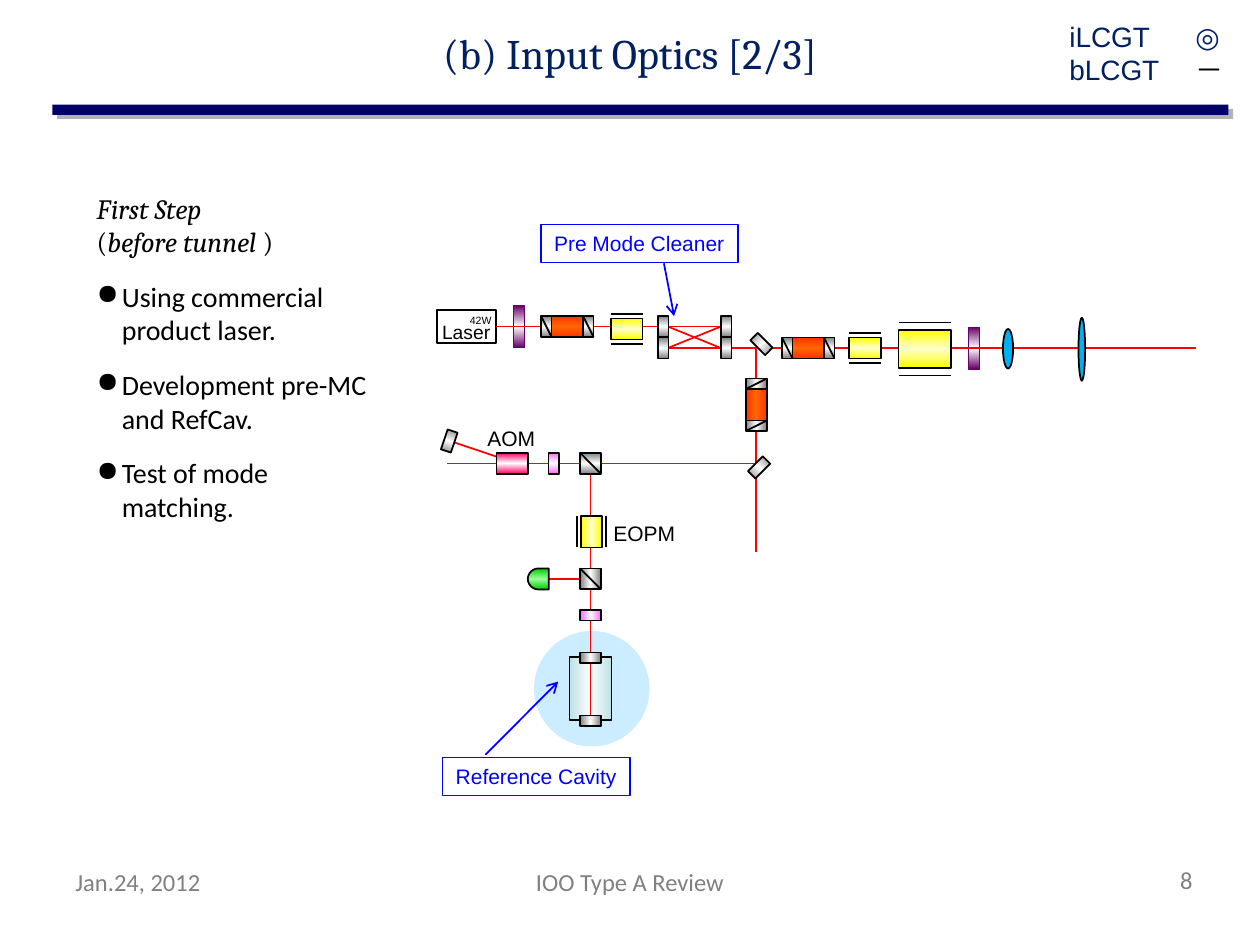
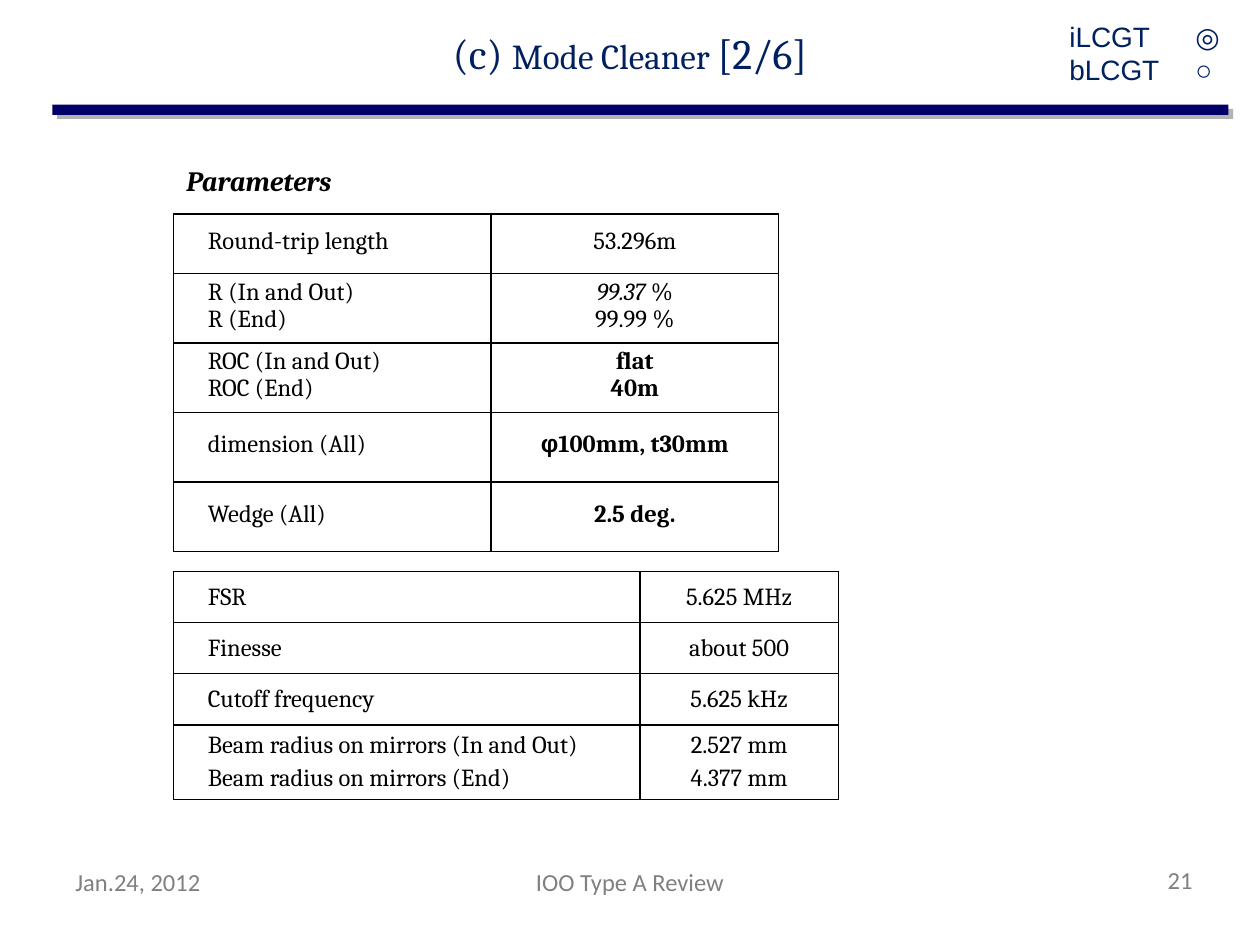
from dataclasses import dataclass
from math import cos, radians, sin
from typing import NamedTuple, Optional

from pptx import Presentation
from pptx.dml.color import RGBColor
from pptx.enum.shapes import MSO_CONNECTOR, MSO_SHAPE as Preset
from pptx.enum.text import MSO_ANCHOR as Anchor, MSO_AUTO_SIZE as AutoSize, PP_ALIGN as Align
from pptx.oxml import parse_xml
from pptx.oxml.ns import nsdecls, qn
from pptx.util import Pt

NAVY, BAND, BAND_SHADOW, GRAY = "002060", "000066", "B2B2B2", "808080"
BLACK, WHITE, BLUE, RED, LENS = "000000", "FFFFFF", "0000FF", "FF0000", "00B0F0"
SERIF, SANS, BODY = "Cambria", "Arial", "Calibri"


class Box(NamedTuple):
    left: float
    top: float
    width: float
    height: float


@dataclass
class Style:
    size: float
    font: str
    color: str = BLACK
    bold: bool = False
    italic: bool = False


class Span(NamedTuple):
    text: str
    style: Style


@dataclass
class Line:
    spans: list
    align: Align = Align.LEFT
    before: float = 0
    after: float = 0
    spacing: Optional[float] = None
    indent: float = 0
    bullet: bool = False


@dataclass
class Optic:
    width: float
    height: float
    edge: str
    middle: str
    gradient_angle: int
    preset: Preset = Preset.RECTANGLE
    outline: str = BLACK
    outline_width: float = 1


class Spot(NamedTuple):
    optic: Optic
    x: float
    y: float
    angle: float = 0


# Optics of the bench
MIRROR = Optic(12, 6, "808080", WHITE, 0)
SPLITTER = Optic(12, 12, "808080", WHITE, 0)
WAVE_PLATE = Optic(12, 6, "FF66FF", WHITE, 0)
VIOLET_PLATE = Optic(6, 24, "660066", WHITE, 90, outline="660066", outline_width=0.5)
ROTATOR = Optic(18, 12, "FF3300", "FF6600", 90)
MODULATOR = Optic(18, 12, "FFFF00", "FFFFCC", 90)
LARGE_MODULATOR = Optic(30, 21.6, "FFFF00", "FFFFCC", 90)
ACOUSTIC = Optic(18, 12, "FF0066", WHITE, 90)
DETECTOR = Optic(12, 12, "00CC00", "99FF99", 90, Preset.FLOWCHART_DELAY)
CAVITY = Optic(36, 24, "BBE0E3", WHITE, 90)

# Beam axes
UPPER, LOWER, BRANCH = 186.6, 198.9, 264.8
FOLD_X, CAVITY_X = 432.2, 337.5


def rgb(color: str) -> RGBColor:
    return RGBColor.from_string(color)


def points(box: Box) -> list:
    return [Pt(value) for value in box]


def style_run(run, style: Style) -> None:
    run.font.size, run.font.name = Pt(style.size), style.font
    run.font.bold, run.font.italic = style.bold, style.italic
    run.font.color.rgb = rgb(style.color)


def write(text_frame, lines: list) -> None:
    for number, line in enumerate(lines):
        paragraph = text_frame.paragraphs[0] if number == 0 else text_frame.add_paragraph()
        properties = paragraph._p.get_or_add_pPr()
        if line.indent:
            properties.set("marL", str(Pt(line.indent)))
        if line.bullet:
            properties.set("indent", str(-Pt(line.indent)))
            properties.append(parse_xml(f'<a:buChar {nsdecls("a")} char="●"/>'))
        paragraph.alignment = line.align
        paragraph.space_before = Pt(line.before if number else 0)
        paragraph.space_after = Pt(line.after)
        if line.spacing:
            paragraph.line_spacing = Pt(line.spacing)
        for span in line.spans:
            run = paragraph.add_run()
            run.text = span.text
            style_run(run, span.style)


def add_text(slide, box: Box, lines: list, wrap: bool = True, anchor: Anchor = Anchor.TOP):
    shape = slide.shapes.add_textbox(*points(box))
    text_frame = shape.text_frame
    text_frame.word_wrap = wrap
    text_frame.vertical_anchor = anchor
    if not wrap:
        text_frame.auto_size = AutoSize.SHAPE_TO_FIT_TEXT
    write(text_frame, lines)
    return shape


def add_shape(slide, box: Box, fill: str, outline: Optional[str] = None,
              preset: Preset = Preset.RECTANGLE, outline_width: float = 1):
    shape = slide.shapes.add_shape(preset, *points(box))
    shape.shadow.inherit = False
    shape.fill.solid()
    shape.fill.fore_color.rgb = rgb(fill)
    if outline:
        shape.line.color.rgb = rgb(outline)
        shape.line.width = Pt(outline_width)
    else:
        shape.line.fill.background()
    return shape


def add_line(slide, x1: float, y1: float, x2: float, y2: float, color: str = BLACK,
             arrow: bool = False):
    connector = slide.shapes.add_connector(
        MSO_CONNECTOR.STRAIGHT, Pt(x1), Pt(y1), Pt(x2), Pt(y2))
    connector.line.color.rgb = rgb(color)
    connector.line.width = Pt(1)
    properties = connector._element.spPr
    if arrow:
        properties.find(qn("a:ln")).append(
            parse_xml(f'<a:tailEnd {nsdecls("a")} type="arrow"/>'))
    properties.append(parse_xml(f'<a:effectLst {nsdecls("a")}/>'))
    return connector


def add_optic(slide, spot: Spot) -> None:
    optic = spot.optic
    box = Box(spot.x - optic.width / 2, spot.y - optic.height / 2, optic.width, optic.height)
    shape = add_shape(slide, box, optic.middle, optic.outline, optic.preset, optic.outline_width)
    shape.rotation = spot.angle
    stops = "".join(
        f'<a:gs pos="{position}"><a:srgbClr val="{color}"/></a:gs>'
        for position, color in ((0, optic.edge), (50000, optic.middle), (100000, optic.edge)))
    gradient = parse_xml(
        f'<a:gradFill {nsdecls("a")} rotWithShape="1"><a:gsLst>{stops}</a:gsLst>'
        f'<a:lin ang="{optic.gradient_angle * 60000}" scaled="0"/></a:gradFill>')
    properties = shape._element.spPr
    properties.replace(properties.find(qn("a:solidFill")), gradient)


def turned(x: float, y: float, dx: float, dy: float, angle: float) -> tuple:
    turn = radians(angle)
    return x + dx * cos(turn) - dy * sin(turn), y + dx * sin(turn) + dy * cos(turn)


def add_isolator(slide, x: float, y: float, angle: float = 0) -> None:
    """A rotator between two polarizers."""
    add_optic(slide, Spot(ROTATOR, x, y, angle))
    for offset in (-12, 12):
        add_optic(slide, Spot(MIRROR, *turned(x, y, offset, 0, angle), (angle + 90) % 360))
        add_line(slide, *turned(x, y, offset - 3, -6, angle), *turned(x, y, offset + 3, 6, angle))


def add_modulator(slide, spot: Spot, gap: float) -> None:
    """A crystal between two electrodes."""
    add_optic(slide, spot)
    half = spot.optic.width / 2
    for offset in (-gap, gap):
        add_line(slide, *turned(spot.x, spot.y, -half, offset, spot.angle),
                 *turned(spot.x, spot.y, half, offset, spot.angle))


def add_splitter(slide, y: float, angle: float) -> None:
    add_optic(slide, Spot(SPLITTER, CAVITY_X, y, angle))
    add_line(slide, CAVITY_X - 6, y - 6, CAVITY_X + 6, y + 6)


def add_callout(slide, box: Box, text: str, arrow: tuple) -> None:
    shape = add_shape(slide, box, WHITE, BLUE)
    shape.text_frame.word_wrap = False
    write(shape.text_frame, [Line([Span(text, Style(12, SANS, BLUE))], Align.CENTER)])
    add_line(slide, *arrow, BLUE, arrow=True)


def add_frame(presentation, title: list, status: list, number: str):
    """A slide with its band, title, status and footers."""
    slide = presentation.slides.add_slide(presentation.slide_layouts[6])
    add_shape(slide, Box(32.6, 62.2, 672, 5.8), BAND_SHADOW)
    add_shape(slide, Box(30, 59.8, 672, 5.8), BAND)
    add_text(slide, Box(0, 0, 720, 60.5), [Line(title, Align.CENTER)], anchor=Anchor.MIDDLE)
    add_text(slide, Box(604, 0, 116, 60.5), status, anchor=Anchor.MIDDLE)
    footers = ((Box(36, 492, 168, 37.5), "Jan.24, 2012", Align.LEFT),
               (Box(628.5, 491, 60, 37.5), number, Align.RIGHT),
               (Box(246, 492, 228, 37.5), "IOO Type A Review", Align.CENTER))
    for box, text, align in footers:
        add_text(slide, box, [Line([Span(text, Style(14, BODY, GRAY))], align)])
    return slide


def add_table(slide, left: float, top: float, widths: list, heights: list, rows: list) -> None:
    shape = slide.shapes.add_table(len(rows), len(widths), Pt(left), Pt(top),
                                   Pt(sum(widths)), Pt(sum(heights)))
    table = shape.table
    table.first_row = table.horz_banding = False
    for column, width in zip(table.columns, widths):
        column.width = Pt(width)
    for row, height, contents in zip(table.rows, heights, rows):
        row.height = Pt(height)
        for cell, lines in zip(row.cells, contents):
            cell.margin_left = cell.margin_right = Pt(5.2)
            cell.margin_top = cell.margin_bottom = 0
            cell.vertical_anchor = Anchor.MIDDLE
            write(cell.text_frame, lines)
            properties = cell._tc.get_or_add_tcPr()
            for side in "LRTB":
                properties.append(parse_xml(
                    f'<a:ln{side} {nsdecls("a")} w="{Pt(1)}"><a:solidFill>'
                    f'<a:srgbClr val="{BLACK}"/></a:solidFill></a:ln{side}>'))
            cell.fill.background()


def build_input_optics(presentation) -> None:
    heading, mark = Style(24, SERIF, NAVY), Style(16, SANS, NAVY)
    slide = add_frame(
        presentation, [Span("(b) Input Optics [2/3]", heading)],
        [Line([Span("iLCGT\t◎", mark)]),
         Line([Span("bLCGT\t", mark), Span("－", Style(16, SERIF))])], "8")

    # Parts behind the beams
    for x, y in ((296.6, UPPER), (556.6, LOWER)):
        add_optic(slide, Spot(VIOLET_PLATE, x, y))
    add_shape(slide, Box(305.2, 360.6, 66, 66), "CCECFF", preset=Preset.OVAL)
    add_optic(slide, Spot(CAVITY, CAVITY_X, 393.6, 270))
    laser = add_shape(slide, Box(249.8, 177.3, 33.8, 18.6), WHITE, BLACK)

    # Beams
    add_line(slide, 283.6, UPPER, 412, UPPER, RED).begin_connect(laser, 3)
    for beam in ((CAVITY_X, 409, CAVITY_X, BRANCH), (683.3, LOWER, 381.6, LOWER),
                 (FOLD_X, 315.4, FOLD_X, LOWER), (412, LOWER, 381.6, UPPER),
                 (412, UPPER, 381.6, LOWER), (435.6, BRANCH, 255.6, BRANCH),
                 (CAVITY_X, 330.8, 313.2, 330.8), (295.2, BRANCH, 259.2, 252.7)):
        add_line(slide, *beam, RED)

    # Optics
    for isolator in ((324.2, UPPER), (461.9, LOWER), (FOLD_X, 231.3, 270)):
        add_isolator(slide, *isolator)
    for spot, gap in ((Spot(MODULATOR, 358.2, 188), 8.6), (Spot(MODULATOR, 494.3, LOWER), 8.6),
                      (Spot(LARGE_MODULATOR, 528.5, 199.4), 15.1),
                      (Spot(MODULATOR, 338, 303.8, 270), 8.4)):
        add_modulator(slide, spot, gap)
    cleaner_mirrors = [Spot(MIRROR, x, y, 90) for x in (379, 415) for y in (LOWER, UPPER)]
    for spot in cleaner_mirrors + [
            Spot(MIRROR, 435.1, 196.6, 45), Spot(MIRROR, 433.8, 267.1, 315),
            Spot(MIRROR, 256.7, 252, 108.6), Spot(MIRROR, CAVITY_X, 375.9),
            Spot(MIRROR, CAVITY_X, 411.9), Spot(WAVE_PLATE, CAVITY_X, 351.6),
            Spot(WAVE_PLATE, 316.4, BRANCH, 90), Spot(ACOUSTIC, 292.7, BRANCH),
            Spot(DETECTOR, 307.6, 330.8, 180)]:
        add_optic(slide, spot)
    add_splitter(slide, BRANCH, 90)
    add_splitter(slide, 330.8, 0)
    for lens in (Box(573.1, 188, 5.8, 22.6), Box(616.3, 181.6, 3.8, 36)):
        add_shape(slide, lens, LENS, BLACK, Preset.OVAL)

    # Labels
    add_callout(slide, Box(309, 128.2, 112.6, 21.8), "Pre Mode Cleaner", (379.4, 150.5, 385.2, 180.7))
    add_callout(slide, Box(252.8, 432.8, 107.3, 21.8), "Reference Cavity", (277.4, 431.3, 319, 389.5))
    for box, text, size in ((Box(271.4, 239.8, 41.8, 21.8), "AOM", 12),
                            (Box(343.4, 293.8, 49.7, 21.8), "EOPM", 12),
                            (Box(245.5, 179.3, 42.5, 20.6), "Laser", 11),
                            (Box(261.4, 175.7, 27.4, 14.4), "42W", 6)):
        add_text(slide, box, [Line([Span(text, Style(size, SANS))])], wrap=False)

    # First step
    upright, slanted = Style(16, SERIF), Style(16, SERIF, italic=True)
    steps = ("Using commercial product laser.", "Development pre-MC and RefCav.",
             "Test of mode matching.")
    add_text(slide, Box(48.2, 105.8, 175.7, 198.7), [
        Line([Span("First Step", slanted)]),
        Line([Span("(", upright), Span("before tunnel ", slanted), Span(")", upright)], after=12),
        *(Line([Span(step, Style(16, BODY))], after=12, indent=14.4, bullet=True)
          for step in steps)])


def build_mode_cleaner(presentation) -> None:
    large, small, mark = Style(24, SERIF, NAVY), Style(20, SERIF, NAVY), Style(16, SANS, NAVY)
    slide = add_frame(
        presentation, [Span("(c) ", large), Span("Mode Cleaner ", small), Span("[2/6]", large)],
        [Line([Span("iLCGT\t◎", mark)]), Line([Span("bLCGT\t○", mark)])], "21")
    caption = Style(16, SERIF, bold=True, italic=True)
    add_text(slide, Box(99.4, 90, 102.2, 26.6), [Line([Span("Parameters", caption)])], wrap=False)

    plain, bold = Style(14, SERIF), Style(14, SERIF, bold=True)
    slanted, greek = Style(14, SERIF, italic=True), Style(14, SANS, bold=True)

    def row(names: list, values: list, spacing: Optional[float] = None) -> tuple:
        return ([Line([Span(name, plain)], before=2.4, spacing=spacing, indent=14.4)
                 for name in names],
                [Line(spans, Align.CENTER, before=2.4, spacing=spacing) for spans in values])

    mirrors = [
        (["Round-trip length"], [[Span("53.296m", plain)]]),
        (["R (In and Out)", "R (End)"],
         [[Span("99.37 ", slanted), Span("%", plain)], [Span("99.99 %", plain)]]),
        (["ROC (In and Out)", "ROC (End)"], [[Span("flat", bold)], [Span("40m", bold)]]),
        (["dimension (All)"], [[Span("φ", greek), Span("100mm, t30mm", bold)]]),
        (["Wedge (All)"], [[Span("2.5 deg.", bold)]])]
    add_table(slide, 99.2, 122.4, [181.4, 164.4], [34] + [39.7] * 4,
              [row(names, values, 13.2) for names, values in mirrors])

    cavity = [
        (["FSR"], ["5.625 MHz"]), (["Finesse"], ["about 500"]),
        (["Cutoff frequency"], ["5.625 kHz"]),
        (["Beam radius on mirrors (In and Out)", "Beam radius on mirrors (End)"],
         ["2.527 mm", "4.377 mm"])]
    add_table(slide, 99.2, 326.6, [266.5, 113.4], [29.2] * 3 + [42.6],
              [row(names, [[Span(value, plain)] for value in values]) for names, values in cavity])


def main() -> None:
    presentation = Presentation()
    presentation.slide_width, presentation.slide_height = Pt(720), Pt(540)
    build_input_optics(presentation)
    build_mode_cleaner(presentation)
    presentation.save("out.pptx")


if __name__ == "__main__":
    main()
